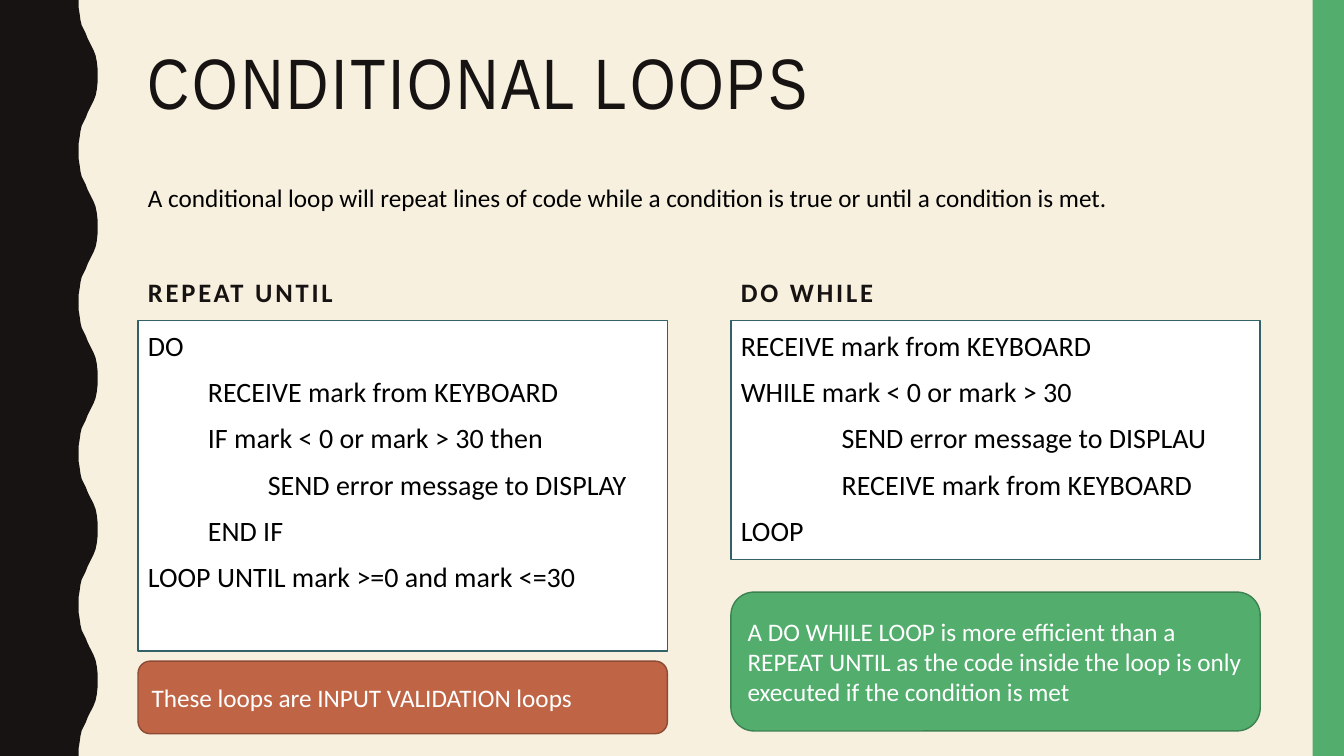
from pptx import Presentation, util as u
from pptx.dml.color import RGBColor
from pptx.enum import shapes, text

# Content
COLORS = {"bg": "F7F0DF", "ink": "171312", "green": "53AE6E", "green_line": "3D8151",
          "rust": "BF6546", "rust_line": "8D4B34", "white": "FFFFFF",
          "black": "000000", "box_line": "326267"}
TITLE = "CONDITIONAL LOOPS"
INTRO = ("A conditional loop will repeat lines of code while a condition is true "
         "or until a condition is met.")
# Each code line is (indent level, text); lengths are in cm
LOOPS = [
    {"heading": "REPEAT UNTIL", "height": 8.33, "indent": 1.51,
     "code": [(0, "DO"),
              (1, "RECEIVE mark from KEYBOARD"),
              (1, "IF mark < 0 or mark > 30 then"),
              (2, "SEND error message to DISPLAY"),
              (1, "END IF"),
              (0, "LOOP UNTIL mark >=0 and mark <=30")],
     "note": "These loops are INPUT VALIDATION loops",
     "note_top": 16.66, "note_height": 1.83, "note_color": "rust"},
    {"heading": "DO WHILE", "height": 6.02, "indent": 2.54,
     "code": [(0, "RECEIVE mark from KEYBOARD"),
              (0, "WHILE mark < 0 or mark > 30"),
              (1, "SEND error message to DISPLAU"),
              (1, "RECEIVE mark from KEYBOARD"),
              (0, "LOOP")],
     "note": ("A DO WHILE LOOP is more efficient than a REPEAT UNTIL as the code "
              "inside the loop is only executed if the condition is met"),
     "note_top": 14.92, "note_height": 3.5, "note_color": "green"},
]

# Layout in cm
WIDTH, HEIGHT = 33.87, 19.05
LEFT, COL_WIDTH, COL_STEP = 3.48, 13.34, 14.94
HEAD_TOP, HEAD_HEIGHT, CODE_TOP = 6.12, 1.75, 8.08
BAND = 0.79
# Half a wave, trough to crest: (x, y)
WAVE = [(1.98, 0), (1.98, 0.18), (2.01, 0.36), (2.03, 0.51), (2.06, 0.64),
        (2.11, 0.74), (2.16, 0.84), (2.21, 0.97), (2.26, 1.07), (2.31, 1.17),
        (2.36, 1.27), (2.41, 1.4), (2.44, 1.55), (2.46, 1.73), (2.46, 1.91)]
WAVE_COUNT = 5

# Text formats
TITLE_FONT = {"name": "Arial Narrow", "size": u.Pt(51), "color": "ink", "spc": 200}
HEAD_FONT = {"name": "Calibri", "size": u.Pt(19), "color": "ink", "bold": True, "spc": 200}
CODE_FONT = {"name": "Calibri", "size": u.Pt(20), "color": "black"}
INTRO_FONT = {"name": "Calibri", "size": u.Pt(18), "color": "black"}
NOTE_FONT = {"name": "Calibri", "size": u.Pt(18), "color": "white"}


def rgb(name):
    return RGBColor.from_string(COLORS[name])


def paint(sp, fill, line=None):
    sp.shadow.inherit = False
    sp.fill.solid()
    sp.fill.fore_color.rgb = rgb(fill)
    if line:
        sp.line.color.rgb = rgb(line)
        sp.line.width = u.Pt(1)
    else:
        sp.line.fill.background()


def write(sp, lines, font, anchor=text.MSO_ANCHOR.TOP, indent=0, **spacing):
    tf = sp.text_frame
    tf.word_wrap = True
    tf.vertical_anchor = anchor
    for i, (level, line) in enumerate(lines):
        p = tf.add_paragraph() if i else tf.paragraphs[0]
        p.alignment = text.PP_ALIGN.LEFT
        for key, value in spacing.items():
            setattr(p, key, value)
        if level:
            p._p.get_or_add_pPr().set("marL", str(u.Cm(level * indent)))
        r = p.add_run()
        r.text = line
        for key, value in font.items():
            if key == "color":
                r.font.color.rgb = rgb(value)
            elif key == "spc":
                r._r.get_or_add_rPr().set("spc", str(value))
            else:
                setattr(r.font, key, value)


def box(s, kind, *place):
    return s.shapes.add_shape(kind, *map(u.Cm, place))


def label(s, *place):
    return s.shapes.add_textbox(*map(u.Cm, place))


def wavy_edge(s):
    period = HEIGHT / WAVE_COUNT
    wave = WAVE + [(x, period - y) for x, y in WAVE[-2::-1]]
    points = [(x, n * period + y) for n in range(WAVE_COUNT) for x, y in wave]
    points += [(0, HEIGHT)]
    builder = s.shapes.build_freeform(0, 0)
    builder.add_line_segments([(u.Cm(x), u.Cm(y)) for x, y in points], close=True)
    paint(builder.convert_to_shape(), "ink")


def main():
    prs = Presentation()
    prs.slide_width, prs.slide_height = u.Cm(WIDTH), u.Cm(HEIGHT)
    s = prs.slides.add_slide(prs.slide_layouts[6])
    s.background.fill.solid()
    s.background.fill.fore_color.rgb = rgb("bg")

    # Side decoration
    wavy_edge(s)
    paint(box(s, shapes.MSO_SHAPE.RECTANGLE, WIDTH - BAND, 0, BAND, HEIGHT), "green")

    # Title and introduction
    write(label(s, LEFT, 1.07, 28.24, 4.14), [(0, TITLE)], TITLE_FONT, line_spacing=0.9)
    write(label(s, LEFT, 4.47, 28.3, 1.02), [(0, INTRO)], INTRO_FONT)

    # One column per loop: heading, code and note
    for i, loop in enumerate(LOOPS):
        x = LEFT + i * COL_STEP
        write(label(s, x, HEAD_TOP, COL_WIDTH, HEAD_HEIGHT), [(0, loop["heading"])],
              HEAD_FONT, text.MSO_ANCHOR.BOTTOM, space_before=u.Pt(7))

        code = box(s, shapes.MSO_SHAPE.RECTANGLE, x, CODE_TOP, COL_WIDTH, loop["height"])
        paint(code, "white", "box_line")
        write(code, loop["code"], CODE_FONT, indent=loop["indent"],
              line_spacing=1.1, space_before=u.Pt(6.5))

        note = box(s, shapes.MSO_SHAPE.ROUNDED_RECTANGLE, x, loop["note_top"],
                   COL_WIDTH, loop["note_height"])
        paint(note, loop["note_color"], loop["note_color"] + "_line")
        write(note, [(0, loop["note"])], NOTE_FONT, text.MSO_ANCHOR.MIDDLE)

    prs.save("out.pptx")


if __name__ == "__main__":
    main()
